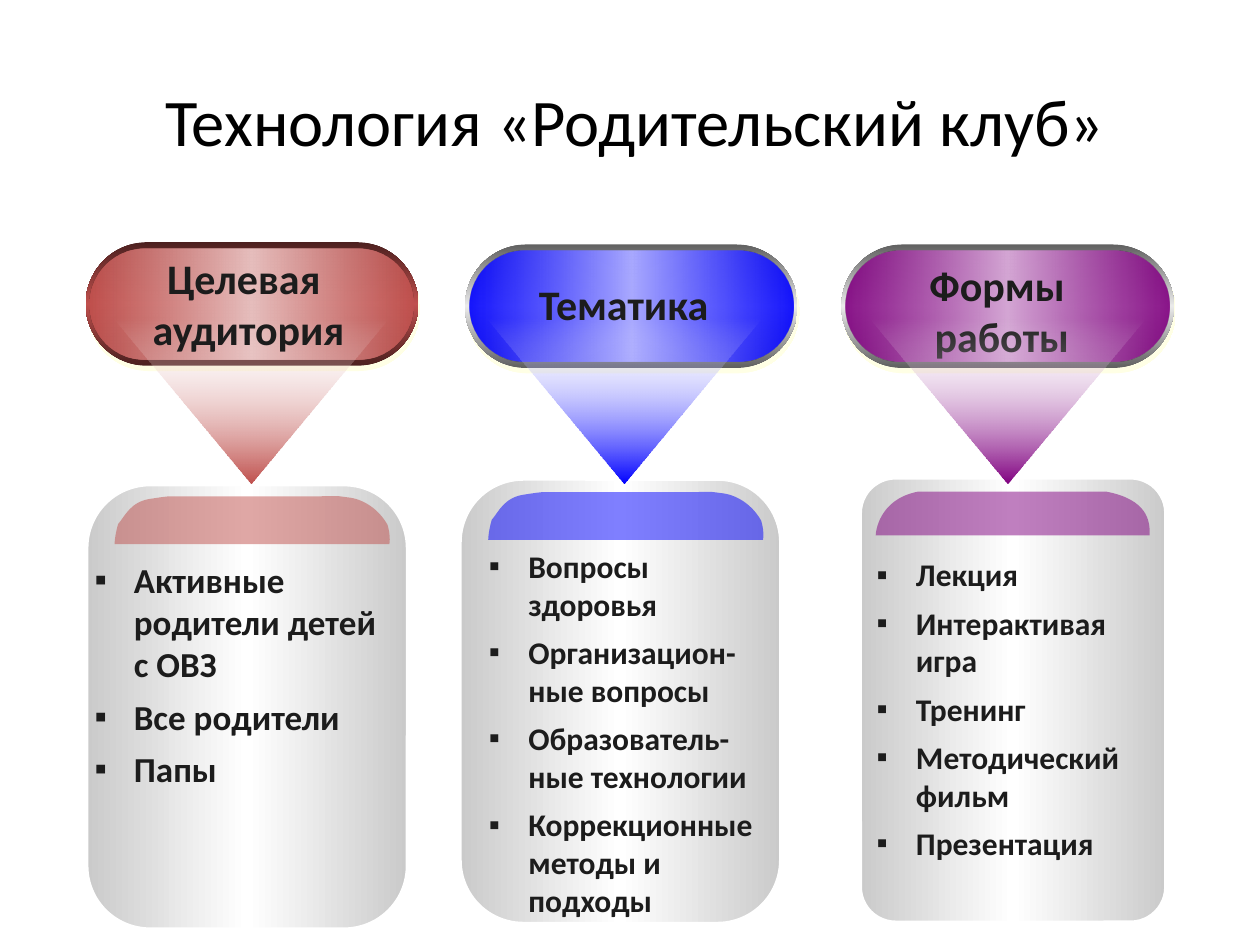
"""Build the parent club slide: three columns with a pill, a pointer and a list."""
from dataclasses import dataclass

from lxml import etree
from pptx import Presentation
from pptx.dml.color import RGBColor
from pptx.enum.shapes import MSO_SHAPE
from pptx.enum.text import MSO_ANCHOR, MSO_AUTO_SIZE, PP_ALIGN
from pptx.oxml.ns import qn
from pptx.util import Pt

ROUND, WEDGE = MSO_SHAPE.ROUNDED_RECTANGLE, MSO_SHAPE.ISOSCELES_TRIANGLE
TOP, MIDDLE = MSO_ANCHOR.TOP, MSO_ANCHOR.MIDDLE
CENTER, LEFT = PP_ALIGN.CENTER, PP_ALIGN.LEFT
FIXED = MSO_AUTO_SIZE.NONE

WHITE = RGBColor(0xFF, 0xFF, 0xFF)
BLACK = RGBColor(0, 0, 0)
INK = RGBColor(0x1C, 0x1C, 0x1C)
SILVER = RGBColor(0xCA, 0xCA, 0xCA)
GREY = RGBColor(0x60, 0x60, 0x60)
PALE = RGBColor(0xEA, 0xEA, 0xEA)
CREAM = RGBColor(0xFF, 0xFF, 0xCC)
RED = RGBColor(0xC0, 0x50, 0x4D)
DARK = RGBColor(0x4C, 0x20, 0x1F)
ROSE = RGBColor(0xE6, 0xBE, 0xBD)
BLUE = RGBColor(0, 0, 0xFF)
SKY = RGBColor(0xA9, 0xA9, 0xFF)
PLUM = RGBColor(0x80, 0, 0x80)
LILAC = RGBColor(0xD4, 0xA6, 0xD4)
FONT = "Calibri"

Box = tuple[float, float, float, float]
Spot = tuple[float, float]
Stop = tuple[int, RGBColor, int]

ARCH = [
    [(0, 28)],
    [(0, 28), (0, 23.5), (2, 16.5)],
    [(6, 12), (9, 3.5), (21, 2)],
    [(34, 0), (29, 0.8), (45, 0.6)],
    [(61, 0.6), (101, 0.6), (116, 0.6)],
    [(130, 0.6), (124, 0), (133, 1.2)],
    [(142, 2), (151, 8), (156, 17)],
    [(158, 24), (157, 28), (157, 28)],
]
DOME = [
    [(0, 25)],
    [(0, 23.5), (1.5, 4.5), (24, 0)],
    [(132, 0)],
    [(155, 4.5), (157, 16.5), (156.5, 25)],
]


@dataclass
class Column:
    """One column of the slide."""
    hue: RGBColor
    glow: RGBColor
    rim: RGBColor
    shine: RGBColor
    pill: Spot
    wedge: float
    panel: Box
    bend: float
    cap: Spot
    curves: list
    label: Box
    words: list[str]
    list_box: Box
    size: int
    items: list[str]


COLUMNS = [
    Column(RED, ROSE, DARK, RED, (49, 138.4), 65.5, (13.7, 311.8, 255, 184.3), 0.199,
           (65.5, 283), ARCH, (79.4, 140.8, 125.3, 65.5), ["Целевая ", "аудитория"],
           (46.8, 315.7, 184.3, 156.2), 20,
           ["Активные родители детей с ОВЗ", "Все родители", "Папы"]),
    Column(BLUE, SKY, GREY, PALE, (265.7, 139.7), 278.6, (227, 308.6, 255, 184.3), 0.199,
           (279, 280.6), ARCH, (300.2, 155.5, 112.3, 36), ["Тематика"],
           (272.2, 308.9, 181.4, 221.8), 18,
           ["Вопросы здоровья", "Организацион-ные вопросы",
            "Образователь-ные технологии", "Коррекционные методы и подходы"]),
    Column(PLUM, LILAC, GREY, PALE, (480.8, 139.7), 497.7, (451.4, 312.2, 255, 175.7), 0.118,
           (500.4, 281), DOME, (523.6, 144.9, 97.9, 65.5), ["Формы ", "работы"],
           (493.7, 313.7, 169.9, 200.2), 18,
           ["Лекция", "Интерактивая игра", "Тренинг", "Методический фильм",
            "Презентация"]),
]


def tint(parent, color: RGBColor, alpha: int) -> None:
    node = etree.SubElement(parent, qn("a:srgbClr"), val=str(color))
    if alpha < 100:
        etree.SubElement(node, qn("a:alpha"), val=str(alpha * 1000))


def blend(shape, angle: int, stops: list[Stop]) -> None:
    shape.fill.gradient()
    grad = shape._element.spPr.find(qn("a:gradFill"))
    grad.find(qn("a:lin")).set("ang", str(angle * 60000))
    group = grad.find(qn("a:gsLst"))
    for old in list(group):
        group.remove(old)
    for pos, color, alpha in stops:
        tint(etree.SubElement(group, qn("a:gs"), pos=str(pos * 1000)), color, alpha)


def mirror(edge: RGBColor, core: RGBColor, alpha: int = 100) -> list[Stop]:
    return [(0, edge, alpha), (50, core, 100), (100, edge, alpha)]


def add_form(slide, kind, box: Box, bend: float):
    shape = slide.shapes.add_shape(kind, *map(Pt, box))
    shape.adjustments[0] = bend
    shape.shadow.inherit = False
    shape.line.fill.background()
    return shape


def add_panel(slide, col: Column) -> None:
    panel = add_form(slide, ROUND, col.panel, col.bend)
    panel.rotation = 90
    blend(panel, 90, mirror(SILVER, WHITE))
    panel.line.color.rgb = WHITE
    panel.line.width = Pt(3)


def add_cap(slide, col: Column) -> None:
    left, top = col.cap
    spots = [(Pt(left + x), Pt(top + y)) for part in col.curves for x, y in part]
    pen = slide.shapes.build_freeform(*spots[0])
    pen.add_line_segments(spots[1:], close=True)
    cap = pen.convert_to_shape()
    lines = iter(list(cap._element.spPr.iter(qn("a:lnTo"))))
    for part in col.curves[1:]:
        first, *rest = [next(lines) for _ in part]
        if rest:
            first.tag = qn("a:cubicBezTo")
        for line in rest:
            first.append(line[0])
            line.getparent().remove(line)
    cap.shadow.inherit = False
    cap.line.fill.background()
    cap.fill.solid()
    cap.fill.fore_color.rgb = col.hue
    color = cap._element.spPr.find(qn("a:solidFill"))[0]
    etree.SubElement(color, qn("a:alpha"), val="50000")


def add_pill(slide, col: Column) -> None:
    x, y = col.pill
    rim = add_form(slide, ROUND, (x, y, 190, 70.6), 0.5)
    blend(rim, 90, mirror(col.rim, col.shine))
    glow = etree.SubElement(rim._element.spPr.find(qn("a:effectLst")), qn("a:outerShdw"),
                            dist=str(Pt(3.2)), dir=str(72 * 60000))
    tint(glow, CREAM, 50)
    face = add_form(slide, ROUND, (x + 2.5, y + 3.6, 185, 63.4), 0.5)
    blend(face, 0, mirror(col.hue, col.glow, 90))


def add_wedge(slide, col: Column) -> None:
    wedge = add_form(slide, WEDGE, (col.wedge, 182.9, 156.2, 93.6), 0.5)
    wedge._element.spPr.find(qn("a:xfrm")).set("flipV", "1")
    blend(wedge, 90, [(0, col.hue, 100), (100, WHITE, 0)])


def write(para, text: str, size: int, color: RGBColor, bold: bool, align) -> None:
    para.alignment = align
    run = para.add_run()
    run.text = text
    font = run.font
    font.name, font.size, font.bold = FONT, Pt(size), bold
    font.color.rgb = color


def add_label(slide, col: Column) -> None:
    frame = slide.shapes.add_textbox(*map(Pt, col.label)).text_frame
    frame.word_wrap = False
    for i, word in enumerate(col.words):
        para = frame.add_paragraph() if i else frame.paragraphs[0]
        write(para, word, 24, INK, True, CENTER)


def place(holder, box: Box, anchor):
    holder.left, holder.top, holder.width, holder.height = map(Pt, box)
    frame = holder.text_frame
    frame.word_wrap, frame.auto_size, frame.vertical_anchor = True, FIXED, anchor
    return frame


def fill_list(slide, holder, col: Column) -> None:
    slide.shapes._spTree.append(holder._element)
    frame = place(holder, col.list_box, TOP)
    for i, item in enumerate(col.items):
        para = frame.add_paragraph() if i else frame.paragraphs[0]
        write(para, item, col.size, INK, True, LEFT)
        para.space_before = Pt(0)
        para.space_after = Pt(6 if i < len(col.items) - 1 else 0)
        props = para._p.get_or_add_pPr()
        props.set("marL", str(Pt(22.5)))
        props.set("indent", str(Pt(-22.5)))
        etree.SubElement(props, qn("a:buFont"), typeface="Arial")
        etree.SubElement(props, qn("a:buChar"), char="▪")


def main() -> None:
    deck = Presentation()
    deck.slide_width, deck.slide_height = Pt(720), Pt(540)
    slide = deck.slides.add_slide(deck.slide_layouts[4])
    title, *bodies = slide.placeholders
    head = place(title, (33.8, 32.2, 658, 72.7), MIDDLE)
    write(head.paragraphs[0], "Технология «Родительский клуб»", 38, BLACK, False, CENTER)
    spare = bodies.pop()._element
    spare.getparent().remove(spare)
    first, *rest = COLUMNS
    for draw in (add_panel, add_cap, add_pill):
        for col in COLUMNS:
            draw(slide, col)
    for col in rest:
        add_label(slide, col)
    for col in COLUMNS:
        add_wedge(slide, col)
    add_label(slide, first)
    for holder, col in zip(bodies, COLUMNS):
        fill_list(slide, holder, col)
    deck.save("out.pptx")


if __name__ == "__main__":
    main()
